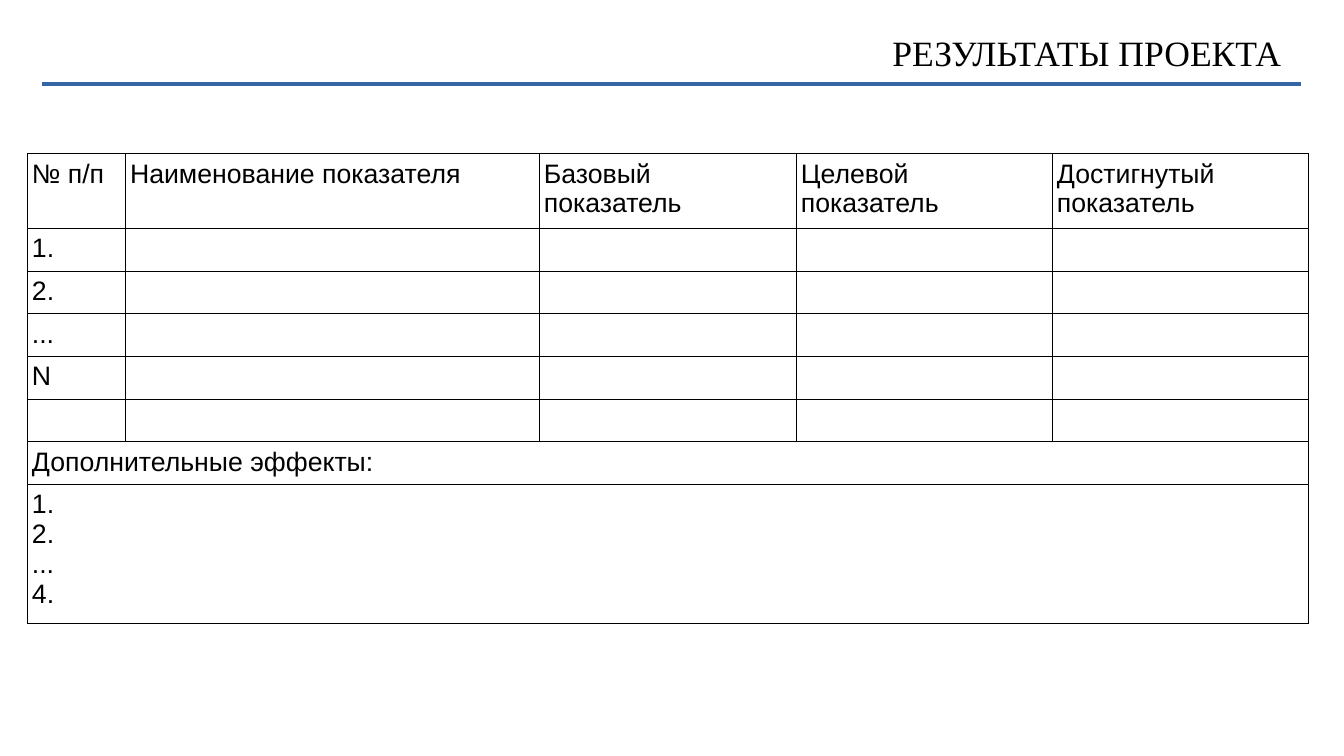
from lxml.etree import SubElement
from pptx import Presentation
from pptx.dml.color import RGBColor
from pptx.enum.shapes import MSO_CONNECTOR as LINE
from pptx.enum.text import MSO_ANCHOR as ANCHOR, PP_ALIGN as ALIGN
from pptx.oxml import parse_xml
from pptx.oxml.ns import nsdecls, qn
from pptx.util import Inches, Pt

BLACK = RGBColor(0x00, 0x00, 0x00)
BLUE = RGBColor(0x34, 0x65, 0xA4)

COLS = [0.92, 3.88, 2.41, 2.4, 2.4]
ROWS = [0.4] * 7 + [1.2]
HEADS = ["№ п/п", "Наименование показателя", "Базовый показатель",
         "Целевой показатель", "Достигнутый показатель"]
MARKS = ["1.", "2.", "...", "N", ""]
EXTRAS = ["Дополнительные эффекты:", "1.\n2.\n...\n4."]


def set_font(par, name, size):
    par.font.name = name
    par.font.size = Pt(size)
    par.font.color.rgb = BLACK


def add_rule(slide):
    rule = slide.shapes.add_connector(
        LINE.STRAIGHT, Inches(0.39), Inches(0.79), Inches(12.2), Inches(0.79))
    rule.line.color.rgb = BLUE
    rule.line.width = Pt(3)
    SubElement(rule._element.spPr, qn("a:effectLst"))


def add_title(slide, text):
    box = slide.shapes.add_textbox(
        Inches(0.67), Inches(0), Inches(11.34), Inches(0.98))
    frame = box.text_frame
    frame.word_wrap = True
    frame.vertical_anchor = ANCHOR.MIDDLE
    frame.margin_left = frame.margin_right = 0
    frame.margin_top = frame.margin_bottom = 0
    par = frame.paragraphs[0]
    par.text = text
    par.alignment = ALIGN.RIGHT
    set_font(par, "Times New Roman", 24)


def add_border(cell):
    props = cell._tc.get_or_add_tcPr()
    for pos, side in enumerate(("lnL", "lnR", "lnT", "lnB")):
        props.insert(pos, parse_xml(
            f'<a:{side} {nsdecls("a")} w="{Pt(0.57)}"><a:solidFill>'
            f'<a:srgbClr val="{BLACK}"/></a:solidFill></a:{side}>'))


def style_cell(cell):
    cell.fill.background()
    cell.margin_left = cell.margin_right = Inches(0.04)
    cell.margin_top = cell.margin_bottom = Inches(0.05)
    for par in cell.text_frame.paragraphs:
        set_font(par, "Arial", 18)
    add_border(cell)


def add_grid(slide):
    frame = slide.shapes.add_table(
        len(ROWS), len(COLS), Inches(0.26), Inches(1.44),
        Inches(sum(COLS)), Inches(sum(ROWS)))
    table = frame.table
    table.first_row = table.horz_banding = False
    for col, width in zip(table.columns, COLS):
        col.width = Inches(width)
    for row, height in zip(table.rows, ROWS):
        row.height = Inches(height)

    for col, head in enumerate(HEADS):
        table.cell(0, col).text = head
    for row, text in enumerate(MARKS + EXTRAS, 1):
        table.cell(row, 0).text = text
        if row > len(MARKS):
            table.cell(row, 0).merge(table.cell(row, len(COLS) - 1))
    for cell in table.iter_cells():
        style_cell(cell)


def main():
    deck = Presentation()
    deck.slide_width = Inches(12.6)
    deck.slide_height = Inches(7.09)
    slide = deck.slides.add_slide(deck.slide_layouts[6])
    add_rule(slide)
    add_title(slide, "РЕЗУЛЬТАТЫ ПРОЕКТА")
    add_grid(slide)
    deck.save("out.pptx")


if __name__ == "__main__":
    main()
